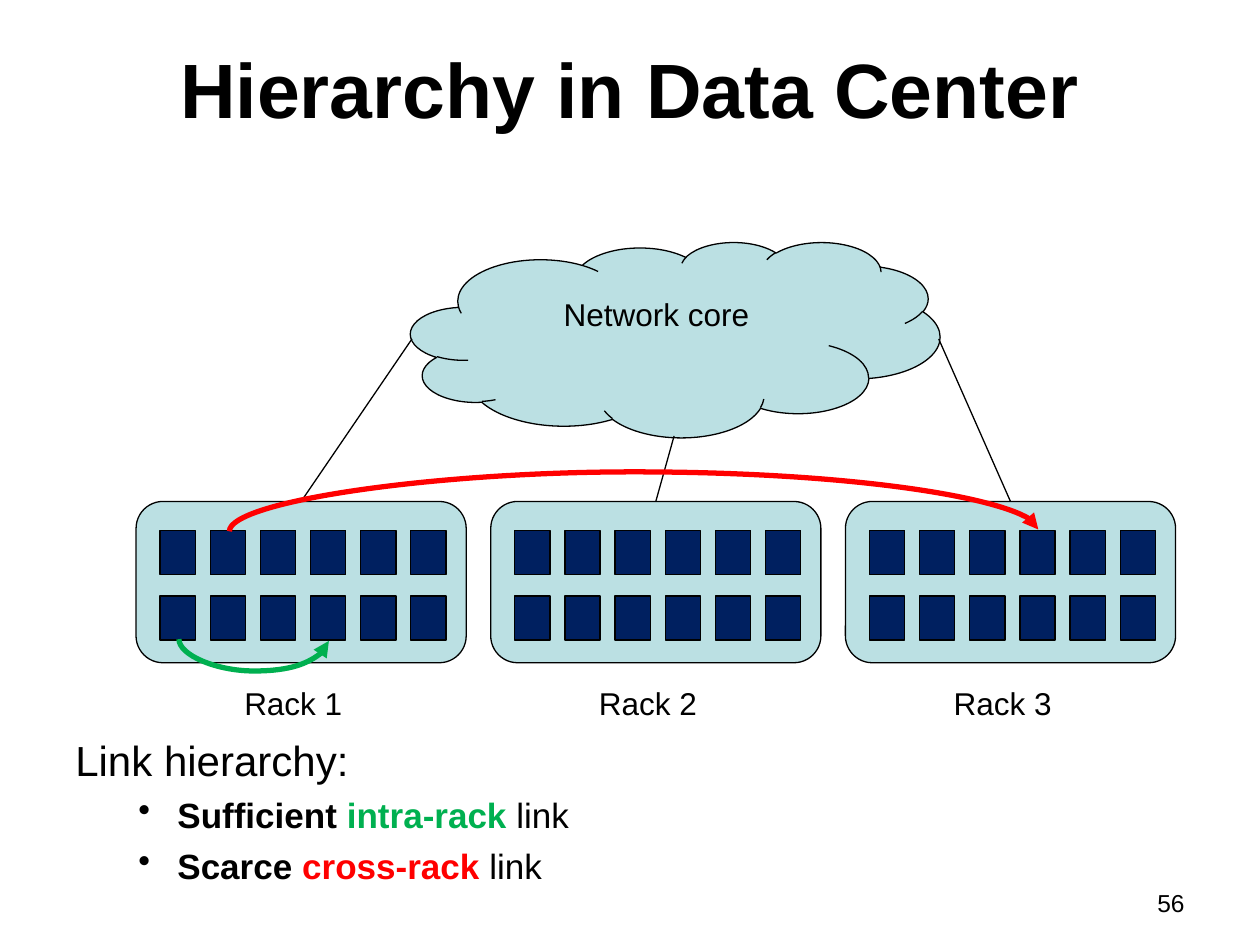
from dataclasses import dataclass
from itertools import product
from lxml import etree
from pptx import Presentation
from pptx.dml.color import RGBColor
from pptx.enum.shapes import MSO_CONNECTOR, MSO_SHAPE
from pptx.enum.text import MSO_ANCHOR, PP_ALIGN
from pptx.oxml.ns import qn
from pptx.util import Inches, Pt

CLOUD = MSO_SHAPE.CLOUD
FRAME = MSO_SHAPE.FLOWCHART_ALTERNATE_PROCESS
BLOCK = MSO_SHAPE.FLOWCHART_PROCESS
LINE, CURVE = MSO_CONNECTOR.STRAIGHT, MSO_CONNECTOR.CURVE
TOP, MIDDLE = MSO_ANCHOR.TOP, MSO_ANCHOR.MIDDLE
LEFT, MID, RIGHT = PP_ALIGN.LEFT, PP_ALIGN.CENTER, PP_ALIGN.RIGHT

WIDTH, HEIGHT = Inches(10), Inches(7.5)
COLS, ROWS = 100, 75


@dataclass(frozen=True)
class Theme:
    font: str = "Arial"
    ink: str = "000000"
    pale: str = "BBE0E3"
    navy: str = "002060"
    green: str = "00B050"
    red: str = "FF0000"
    title: int = 44
    lead: int = 24
    point: int = 20
    label: int = 18
    page: int = 14
    thin: float = 0.75
    thick: float = 3


THEME = Theme()


def col(count):
    return round(WIDTH * count / COLS)


def row(count):
    return round(HEIGHT * count / ROWS)


def place(box):
    left, top, width, height = box
    return col(left), row(top), col(width), row(height)


def style(para, size, align=LEFT, bold=False):
    para.alignment = align
    font = para.font
    font.name, font.size, font.bold = THEME.font, Pt(size), bold
    font.color.rgb = RGBColor.from_string(THEME.ink)


def write(slide, box, text, size, align=LEFT, bold=False, anchor=TOP, wrap=True):
    frame = slide.shapes.add_textbox(*place(box)).text_frame
    frame.word_wrap = wrap
    frame.vertical_anchor = anchor
    frame.text = text
    style(frame.paragraphs[0], size, align, bold)
    return frame


def draw(slide, kind, box, fill):
    shape = slide.shapes.add_shape(kind, *place(box))
    shape.shadow.inherit = False
    shape.fill.solid()
    shape.fill.fore_color.rgb = RGBColor.from_string(fill)
    shape.line.color.rgb = RGBColor.from_string(THEME.ink)
    shape.line.width = Pt(THEME.thin)
    return shape


def join(slide, start, end, kind=LINE, color=THEME.ink, width=THEME.thin):
    link = slide.shapes.add_connector(
        kind, col(start[0]), row(start[1]), col(end[0]), row(end[1]))
    link.line.color.rgb = RGBColor.from_string(color)
    link.line.width = Pt(width)
    etree.SubElement(link._element.spPr, qn("a:effectLst"))
    return link


def bend(slide, box, rise, color):
    left, base, span, thin = box
    mid, half = left + span / 2, span / 2
    ends = [(mid + thin / 2, base - half), (mid - thin / 2, base + half)]
    if rise > 0:
        ends = [(ends[0][0], base + half), (ends[1][0], base - half)]
    link = join(slide, *ends, CURVE, color, THEME.thick)
    props = link._element.spPr
    props.find(qn("a:xfrm")).set("rot", str((90 if rise > 0 else 270) * 60000))
    guide = etree.SubElement(props.find(".//" + qn("a:avLst")), qn("a:gd"))
    guide.set("name", "adj1")
    guide.set("fmla", f"val {round(abs(rise) / thin * 100000)}")
    tip = etree.SubElement(props.find(qn("a:ln")), qn("a:tailEnd"))
    tip.set("type", "triangle")


def rack(slide, box, name):
    left, top, width, height = box
    draw(slide, FRAME, box, THEME.pale)
    for x, y in product(range(6), range(2)):
        draw(slide, BLOCK, (left + 1.9 + 3.98 * x, top + 2.3 + 5.2 * y, 2.8, 3.5),
             THEME.navy)
    write(slide, (left + 7.6, top + height + 1.2, 11.1, 3.9), name, THEME.label,
          wrap=False)


def core(slide, box):
    frame = draw(slide, CLOUD, box, THEME.pale).text_frame
    frame.vertical_anchor = TOP
    frame.margin_top = row(1.9)
    frame.text = "Network core"
    style(frame.paragraphs[0], THEME.label, MID)


def network(slide, box):
    left, top, width, height = box
    wide, high, step = 26.2, 12.8, 28.15
    base = top + height - high
    for x in range(3):
        rack(slide, (left + x * step, base, wide, high), f"Rack {x + 1}")
    core(slide, (left + 21.8, top, 42, 15.5))
    ports = [(21.9, 7.7), (42.7, 15.4), (63.7, 7.7)]
    for x, (across, down) in enumerate(ports):
        join(slide, (left + across, top + down), (left + x * step + wide / 2, base))
    bend(slide, (left + 3.4, base + 11, 11.9, 0.14), -2.5, THEME.green)
    bend(slide, (left + 7.4, base + 2.3, 64.2, 0.14), 4.66, THEME.red)


def notes(slide, box):
    frame = write(slide, box, "Link hierarchy:", THEME.lead)
    points = [("Sufficient ", "intra-rack", THEME.green),
              ("Scarce ", "cross-rack", THEME.red)]
    for head, word, color in points:
        para = frame.add_paragraph()
        props = para._p.get_or_add_pPr()
        props.set("marL", str(col(8.1)))
        props.set("indent", str(-col(3.1)))
        para.space_before = Pt(5)
        etree.SubElement(props, qn("a:buChar")).set("char", "•")
        style(para, THEME.point)
        for text, bold, tint in [(head, True, THEME.ink), (word, True, color),
                                 (" link", False, THEME.ink)]:
            run = para.add_run()
            run.text = text
            run.font.bold = bold
            run.font.color.rgb = RGBColor.from_string(tint)


def main():
    deck = Presentation()
    deck.slide_width, deck.slide_height = WIDTH, HEIGHT
    slide = deck.slides.add_slide(deck.slide_layouts[6])
    write(slide, (5, 3, 90, 7.9), "Hierarchy in Data Center", THEME.title, MID,
          True, MIDDLE)
    write(slide, (71.7, 70, 23.3, 3.5), "56", THEME.page, RIGHT)
    network(slide, (10.8, 19.2, 82.5, 33.4))
    notes(slide, (5, 57.8, 90, 15.7))
    deck.save("out.pptx")


if __name__ == "__main__":
    main()
